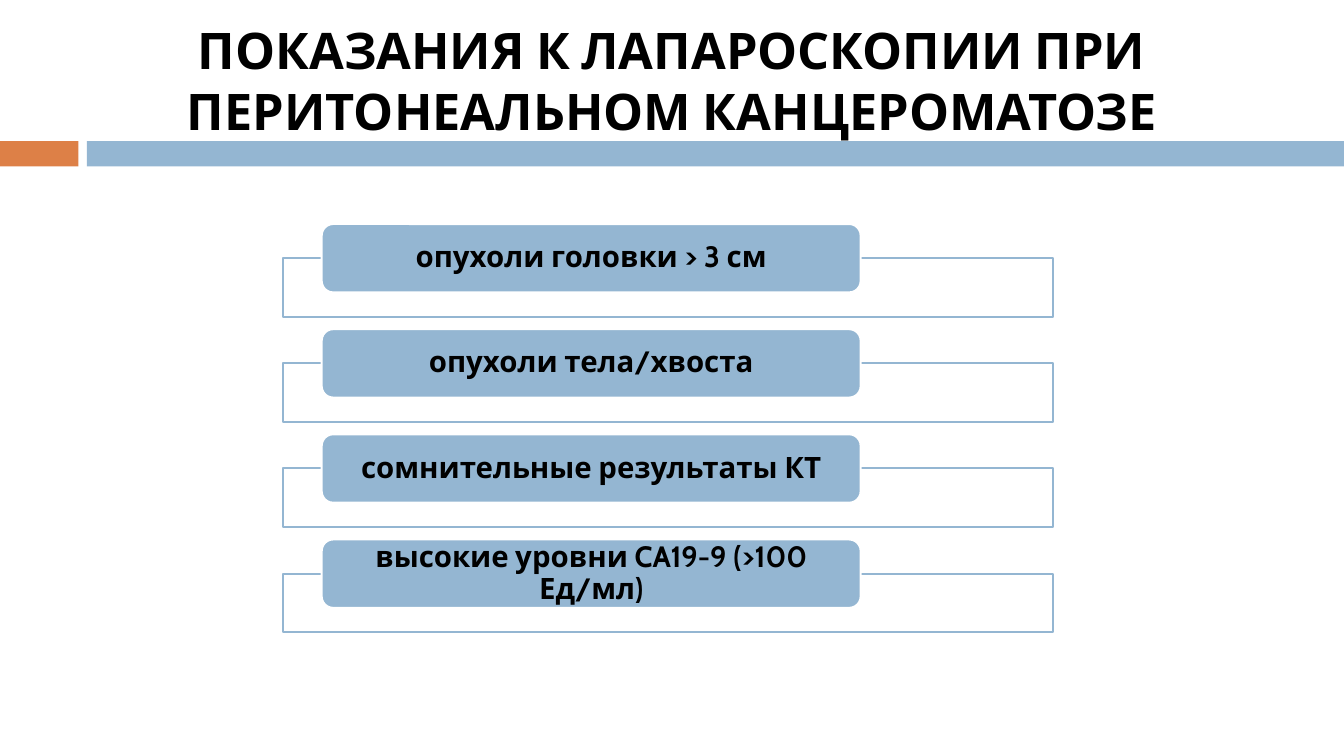
from lxml import etree
from pptx import Presentation
from pptx.dml.color import RGBColor
from pptx.enum import shapes, text
from pptx.oxml import ns
from pptx.util import Pt

COLORS = {"blue": "94B6D2", "orange": "DD8047", "white": "FFFFFF", "black": "000000"}
FONT = "Cabin"
TITLE = "ПОКАЗАНИЯ К ЛАПАРОСКОПИИ ПРИ ПЕРИТОНЕАЛЬНОМ КАНЦЕРОМАТОЗЕ"
INDICATIONS = [
    "опухоли головки > 3 см",
    "опухоли тела/хвоста",
    "сомнительные результаты КТ",
    "высокие уровни CA19-9 (>100 Ед/мл)",
]
FIRST_TOP = 160
ROW_PITCH = 75.1


def rgb(name):
    return RGBColor.from_string(COLORS[name])


def add_box(s, kind, box, fill, line=None, alpha=None):
    sp = s.shapes.add_shape(kind, *map(Pt, box))
    sp.shadow.inherit = False
    sp.fill.solid()
    sp.fill.fore_color.rgb = rgb(fill)
    if alpha is not None:
        color = sp.fill._xPr.find(".//" + ns.qn("a:srgbClr"))
        etree.SubElement(color, ns.qn("a:alpha"), val=str(alpha * 1000))
    if line:
        sp.line.color.rgb = rgb(line)
        sp.line.width = Pt(1.5)
    else:
        sp.line.fill.background()
    return sp


def write_text(sp, words, size, side=7.2, edge=3.6, spacing=None):
    tf = sp.text_frame
    tf.text = words
    tf.word_wrap = True
    tf.vertical_anchor = text.MSO_ANCHOR.MIDDLE
    tf.margin_left = tf.margin_right = Pt(side)
    tf.margin_top = tf.margin_bottom = Pt(edge)
    p = tf.paragraphs[0]
    p.alignment = text.PP_ALIGN.CENTER
    p.line_spacing = spacing
    r = p.runs[0]
    r.font.name = FONT
    r.font.size = Pt(size)
    r.font.bold = True
    r.font.color.rgb = rgb("black")


def add_indication(s, words, top):
    add_box(s, shapes.MSO_SHAPE.RECTANGLE, (202.3, top + 24.4, 550, 41.8),
            "white", "blue", alpha=90)
    sp = add_box(s, shapes.MSO_SHAPE.ROUNDED_RECTANGLE, (229.8, top, 385, 48.9),
                 "blue", "white")
    write_text(sp, words, 21, side=14.4, edge=0, spacing=0.9)


def main():
    prs = Presentation()
    prs.slide_width, prs.slide_height = Pt(960), Pt(540)
    s = prs.slides.add_slide(prs.slide_layouts[6])

    # Divider band
    add_box(s, shapes.MSO_SHAPE.RECTANGLE, (0, 100.8, 56, 18), "orange")
    add_box(s, shapes.MSO_SHAPE.RECTANGLE, (62, 100.8, 898, 18), "blue")

    # Title
    title = s.shapes.add_textbox(Pt(0), Pt(18), Pt(960), Pt(78))
    write_text(title, TITLE, 36)

    # List of indications
    for i, words in enumerate(INDICATIONS):
        add_indication(s, words, FIRST_TOP + i * ROW_PITCH)

    prs.save("out.pptx")


if __name__ == "__main__":
    main()
